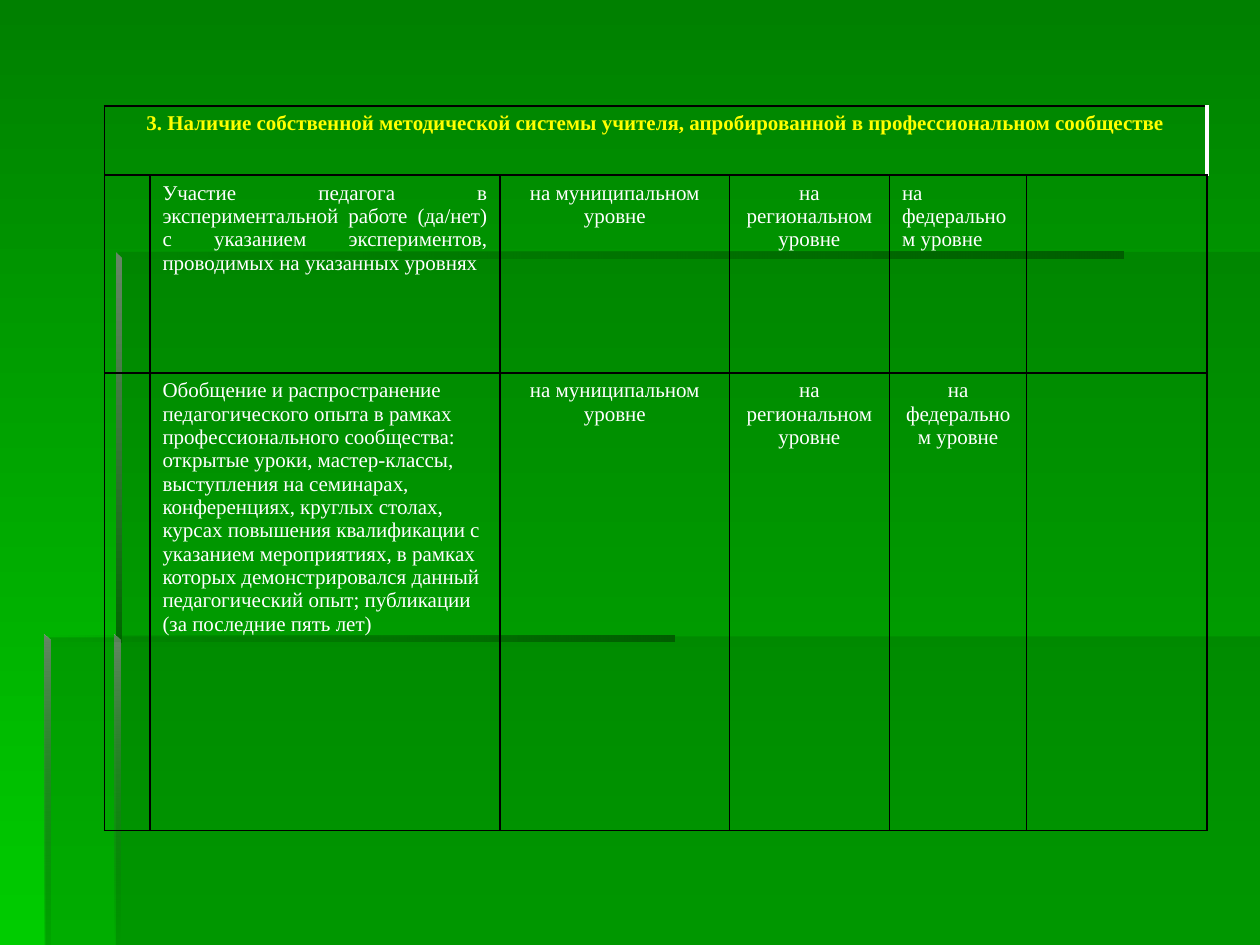
import pptx
import pptx.util
import pptx.oxml
import pptx.oxml.ns
import pptx.dml.color
import pptx.enum.text

Inches, Pt = pptx.util.Inches, pptx.util.Pt
qn = pptx.oxml.ns.qn
ALIGN = pptx.enum.text.PP_ALIGN
FONT, TEXT_SIZE = "Times New Roman", 12
COLORS = {"top": "008000", "bottom": "00CC00", "panel": "006600", "edge": "005E00",
          "glint": "668666", "heading": "FFFF00", "text": "FFFFFF", "border": "000000"}

# Content: each cell is text and alignment
HEADING = "3. Наличие собственной методической системы учителя, апробированной в профессиональном сообществе"
MUNICIPAL = ("на муниципальном уровне", ALIGN.CENTER)
REGIONAL = ("на региональном уровне", ALIGN.CENTER)
FEDERAL = "на федеральном уровне"
EMPTY = ("", ALIGN.LEFT)
ROWS = [
    [(HEADING, ALIGN.CENTER)] + [EMPTY] * 5,
    [EMPTY,
     ("Участие педагога в экспериментальной работе (да/нет) с указанием экспериментов, "
      "проводимых на указанных уровнях", ALIGN.JUSTIFY),
     MUNICIPAL, REGIONAL, (FEDERAL, ALIGN.LEFT), EMPTY],
    [EMPTY,
     ("Обобщение и распространение педагогического опыта в рамках профессионального "
      "сообщества: открытые уроки, мастер-классы, выступления на семинарах, конференциях, "
      "круглых столах, курсах повышения квалификации с указанием мероприятиях, в рамках "
      "которых демонстрировался данный педагогический опыт; публикации (за последние пять лет)",
      ALIGN.LEFT),
     MUNICIPAL, REGIONAL, (FEDERAL, ALIGN.CENTER), EMPTY],
]
COLUMN_WIDTHS = [0.36, 2.78, 1.82, 1.27, 1.09, 1.43]
ROW_HEIGHTS = [0.55, 1.57, 3.63]
TABLE_LEFT, TABLE_TOP = 0.83, 0.84

# Backdrop: outline, gradient stops (position, colour, opacity), angle
WIDTH, HEIGHT = 10, 7.5
BAR = 0.05
PANEL = [(0, "panel", 30), (100, "panel", 30)]
SHELF = [(0, "panel", 0), (100, "edge", 100)]


def box(left, top, right, bottom):
    return [(left, top), (left, bottom), (right, bottom), (right, top)]


def post(left, top, bottom):
    """Upright bar with a mitred top corner."""
    return [(left, top), (left, bottom), (left + BAR, bottom), (left + BAR, top + BAR)]


BACKDROP = [
    (box(0.92, 5.05, WIDTH, HEIGHT), PANEL, 0),
    ([(0.94, 5.06), (0.36, 5.06), (0.36, HEIGHT), (WIDTH, HEIGHT), (WIDTH, 2), (0.94, 2)], PANEL, 0),
    (box(0.92, 2, 8.92, 2 + BAR), SHELF, 0),
    (post(0.92, 2, 5.1), [(0, "glint", 100), (100, "panel", 100)], 90),
    (post(0.91, 5.04, HEIGHT), [(0, "glint", 100), (100, "panel", 0)], 90),
    (box(0.35, 5.04, 5.35, 5.04 + BAR), SHELF, 0),
    (post(0.35, 5.04, HEIGHT), [(0, "glint", 100), (100, "panel", 10)], 90),
]


def set_gradient(fill, parent, stops, angle):
    """Swap the solid fill inside parent for a linear gradient."""
    fill.solid()
    stop_xml = "".join(
        f'<a:gs pos="{pos * 1000}"><a:srgbClr val="{COLORS[color]}">'
        f'<a:alpha val="{opacity * 1000}"/></a:srgbClr></a:gs>' for pos, color, opacity in stops)
    solid = parent.find(qn("a:solidFill"))
    parent.replace(solid, pptx.oxml.parse_xml(
        f'<a:gradFill {pptx.oxml.ns.nsdecls("a")} rotWithShape="1"><a:gsLst>{stop_xml}</a:gsLst>'
        f'<a:lin ang="{angle * 60000}" scaled="0"/></a:gradFill>'))


def set_borders(cell, right=("border", 1)):
    sides = {"lnL": ("border", 1), "lnR": right, "lnT": ("border", 1), "lnB": ("border", 1)}
    properties = cell._tc.get_or_add_tcPr()
    for index, (side, (color, width)) in enumerate(sides.items()):
        properties.insert(index, pptx.oxml.parse_xml(
            f'<a:{side} {pptx.oxml.ns.nsdecls("a")} w="{Pt(width)}"><a:solidFill>'
            f'<a:srgbClr val="{COLORS[color]}"/></a:solidFill></a:{side}>'))


prs = pptx.Presentation()
prs.slide_width, prs.slide_height = Inches(WIDTH), Inches(HEIGHT)
slide = prs.slides.add_slide(prs.slide_layouts[6])

# Background and backdrop
backdrop_fill = slide.background.fill
backdrop_fill.solid()
set_gradient(backdrop_fill, slide._element.find(".//" + qn("p:bgPr")),
             [(0, "top", 100), (100, "bottom", 100)], 90)
for outline, stops, angle in BACKDROP:
    corners = [(Inches(x), Inches(y)) for x, y in outline]
    builder = slide.shapes.build_freeform(*corners[0])
    builder.add_line_segments(corners[1:], close=True)
    part = builder.convert_to_shape()
    part.shadow.inherit = False
    part.line.fill.background()
    set_gradient(part.fill, part._element.spPr, stops, angle)

# Table
table = slide.shapes.add_table(
    len(ROWS), len(COLUMN_WIDTHS), Inches(TABLE_LEFT), Inches(TABLE_TOP),
    Inches(sum(COLUMN_WIDTHS)), Inches(sum(ROW_HEIGHTS))).table
table.first_row = table.horz_banding = False
for column, width in zip(table.columns, COLUMN_WIDTHS):
    column.width = Inches(width)
for row, height in zip(table.rows, ROW_HEIGHTS):
    row.height = Inches(height)
table.cell(0, 0).merge(table.cell(0, len(COLUMN_WIDTHS) - 1))

for r, row in enumerate(ROWS):
    is_heading = r == 0
    for c, (text, alignment) in enumerate(row):
        cell = table.cell(r, c)
        cell.fill.background()
        set_borders(cell, ("text", 2.25) if is_heading else ("border", 1))
        paragraph = cell.text_frame.paragraphs[0]
        paragraph.text = text
        paragraph.alignment = alignment
        font = paragraph.font
        font.name, font.size, font.bold = FONT, Pt(TEXT_SIZE), is_heading
        font.color.rgb = pptx.dml.color.RGBColor.from_string(
            COLORS["heading" if is_heading else "text"])

prs.save("out.pptx")
